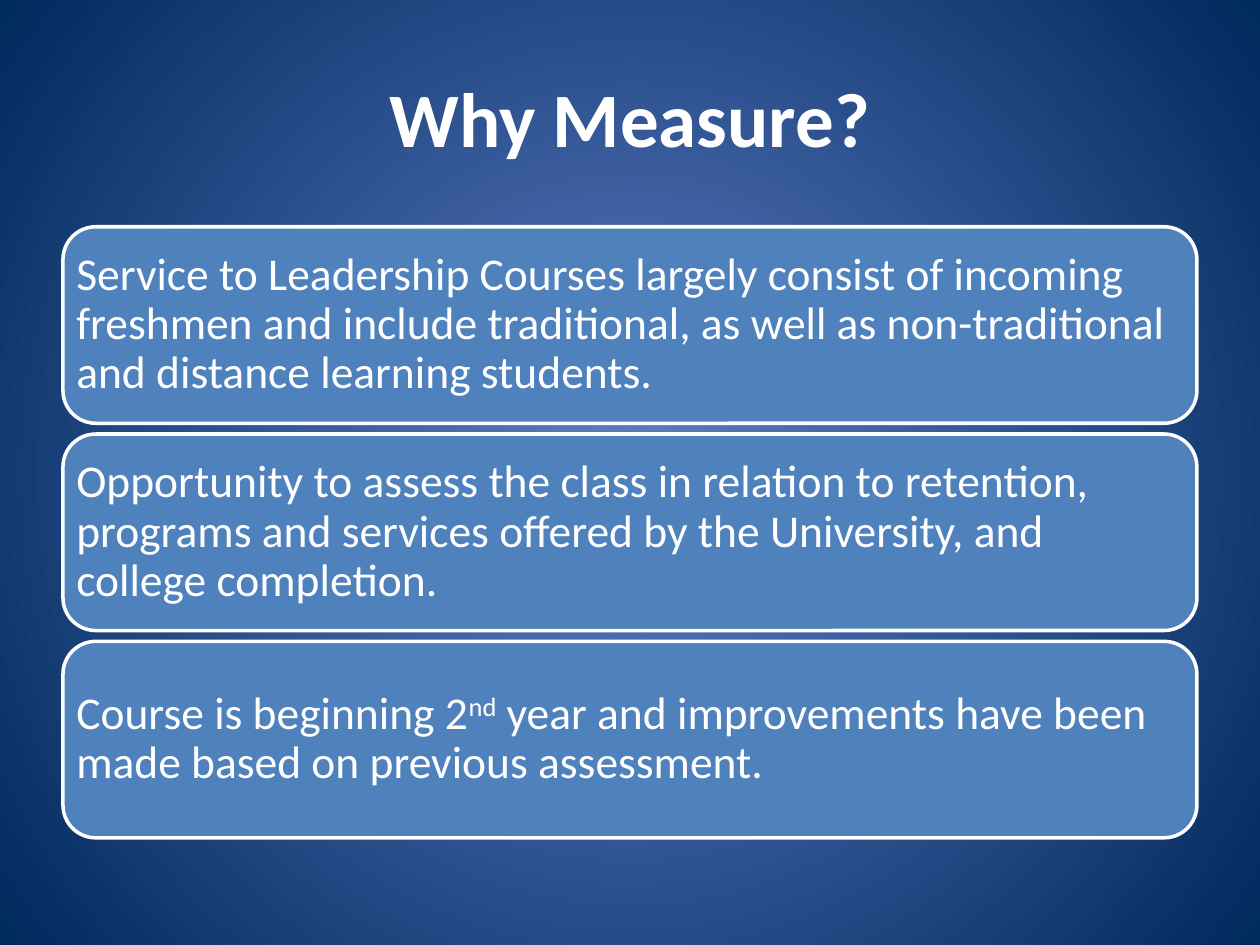
import lxml.etree
import pptx
import pptx.dml.color
import pptx.enum.shapes
import pptx.enum.text
import pptx.oxml.ns
import pptx.util

Inches = pptx.util.Inches
qn = pptx.oxml.ns.qn


def color(hex_value):
    return pptx.dml.color.RGBColor.from_string(hex_value)


def add_span(para, text, size, bold=False):
    span = para.add_run()
    span.text = text
    for name, value in {"name": "Calibri", "size": pptx.util.Pt(size), "bold": bold}.items():
        setattr(span.font, name, value)
    span.font.color.rgb = color("FFFFFF")
    return span


deck = pptx.Presentation()
deck.slide_width, deck.slide_height = Inches(10), Inches(7.5)
page = deck.slides.add_slide(deck.slide_layouts[5])

backdrop = page.background.fill
backdrop.gradient()
for stop, shade in zip(backdrop.gradient_stops, ["5E7CC5", "00295C"]):
    stop.color.rgb = color(shade)
for stop, position in zip(backdrop.gradient_stops, [0, 1]):
    stop.position = position
linear = next(page.background._cSld.iter(qn("a:lin")))
radial = lxml.etree.Element(qn("a:path"), {"path": "circle"})
lxml.etree.SubElement(radial, qn("a:fillToRect"), dict.fromkeys("ltrb", "50000"))
linear.getparent().replace(linear, radial)

margin = deck.slide_width * 0.05
content_width = deck.slide_width - 2 * margin

title = page.shapes.title
title_place = {
    "left": int(margin),
    "top": Inches(0.3),
    "width": int(content_width),
    "height": Inches(1.25),
}
for name, value in title_place.items():
    setattr(title, name, value)
title.text_frame.vertical_anchor = pptx.enum.text.MSO_ANCHOR.MIDDLE
heading = title.text_frame.paragraphs[0]
heading.alignment = pptx.enum.text.PP_ALIGN.CENTER
add_span(heading, "Why Measure?", 44, bold=True)

reasons = [
    ["Service to Leadership Courses largely consist of incoming freshmen and include "
     "traditional, as well as non-traditional and distance learning students."],
    ["Opportunity to assess the class in relation to retention, programs and services "
     "offered by the University, and college completion."],
    ["Course is beginning 2", "nd",
     " year and improvements have been made based on previous assessment."],
]
first_top, box_height, gap = 1.8, 1.56, 0.085
inset = Inches(0.03)
frame_format = {
    "word_wrap": True,
    "vertical_anchor": pptx.enum.text.MSO_ANCHOR.MIDDLE,
    "margin_left": inset,
    "margin_right": inset,
    "margin_top": inset,
    "margin_bottom": inset,
}
for row, reason in enumerate(reasons):
    box = page.shapes.add_shape(
        pptx.enum.shapes.MSO_SHAPE.ROUNDED_RECTANGLE,
        int(margin), Inches(first_top + row * (box_height + gap)),
        int(content_width), Inches(box_height),
    )
    box.shadow.inherit = False
    box.fill.solid()
    box.fill.fore_color.rgb = color("4F81BD")
    box.line.color.rgb = color("FFFFFF")
    box.line.width = pptx.util.Pt(2)
    for name, value in frame_format.items():
        setattr(box.text_frame, name, value)
    para = box.text_frame.paragraphs[0]
    para.alignment = pptx.enum.text.PP_ALIGN.LEFT
    para.line_spacing = 0.9
    for text in reason:
        span = add_span(para, text, 26)
        if text == "nd":
            span.font._element.set("baseline", "30000")

deck.save("out.pptx")
